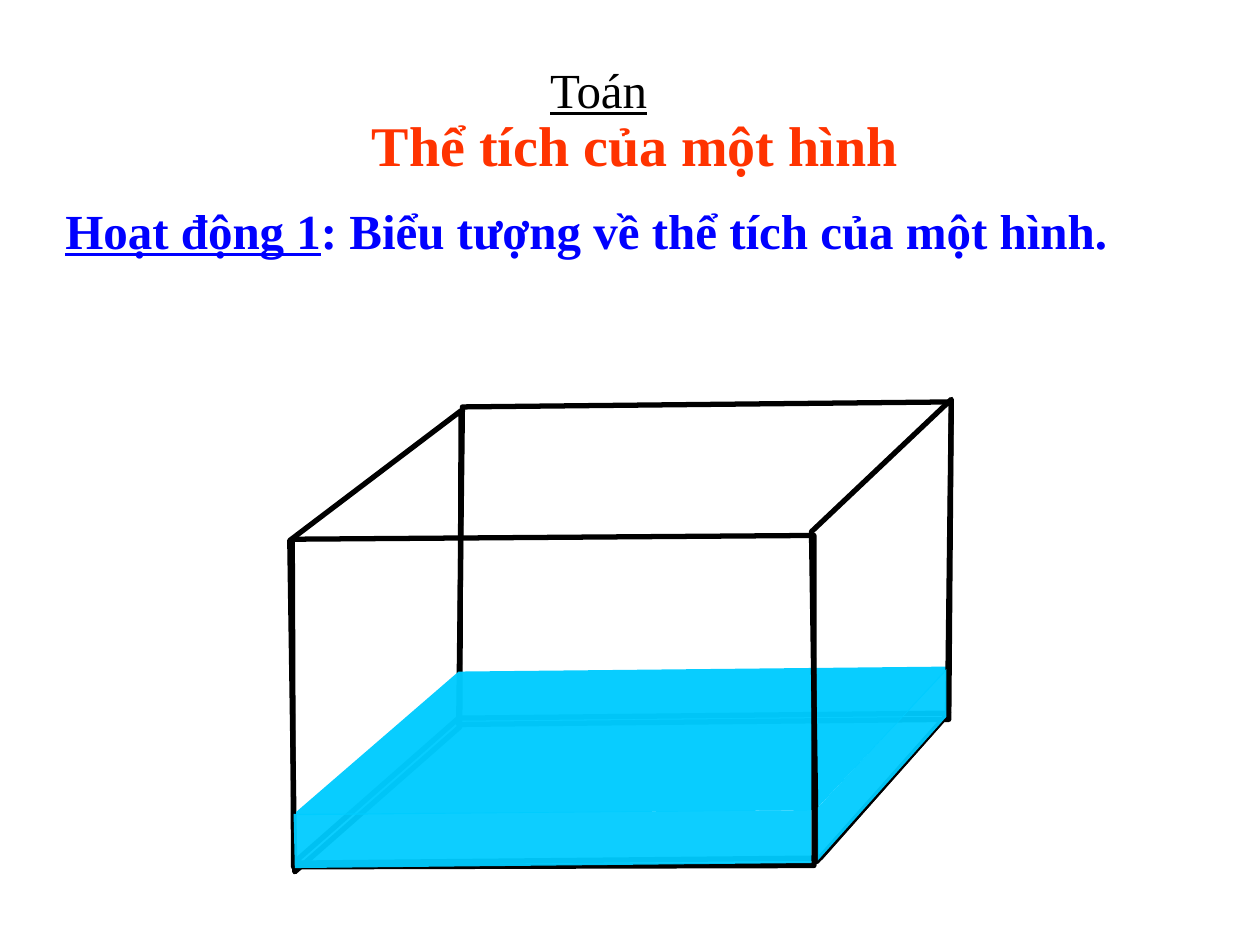
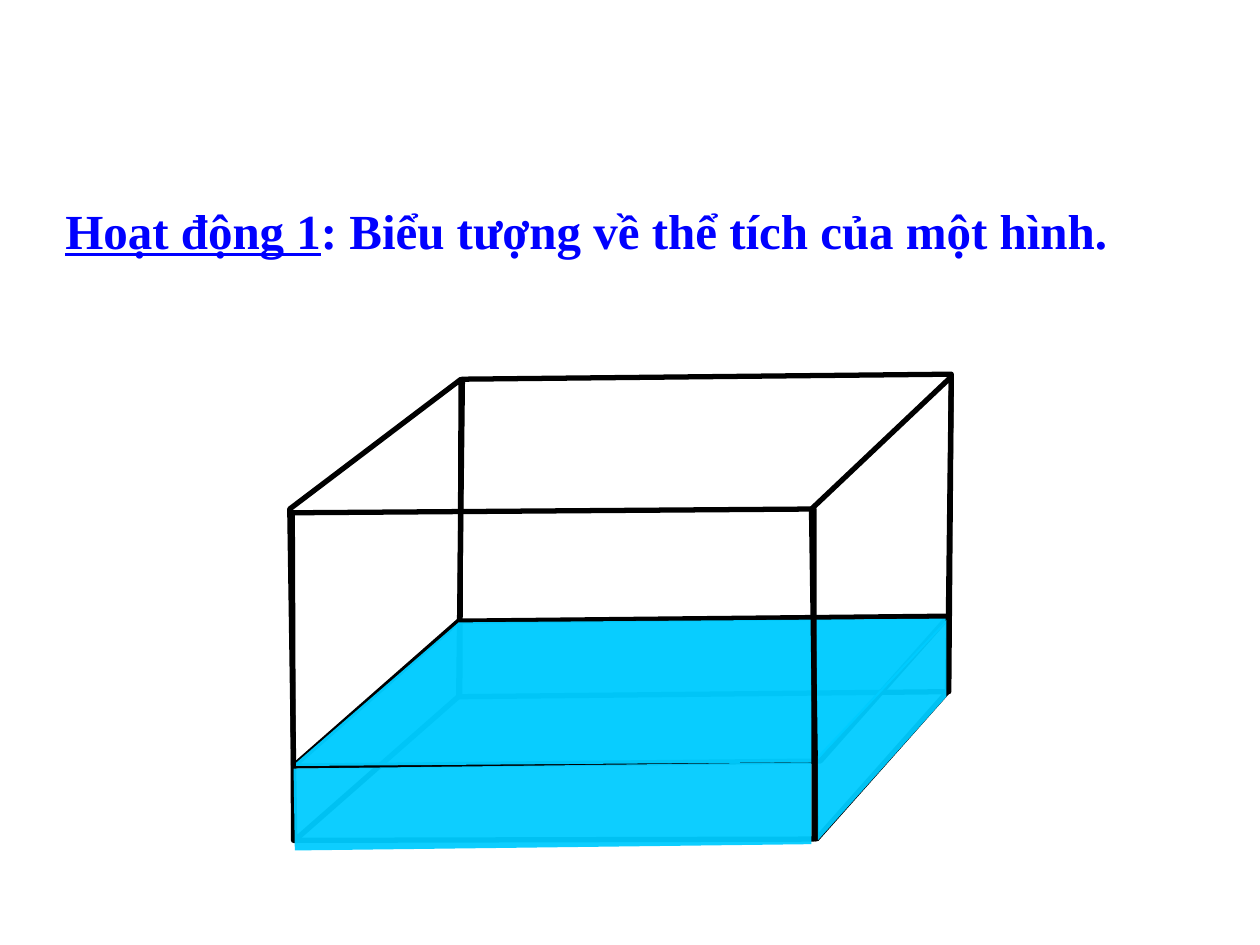
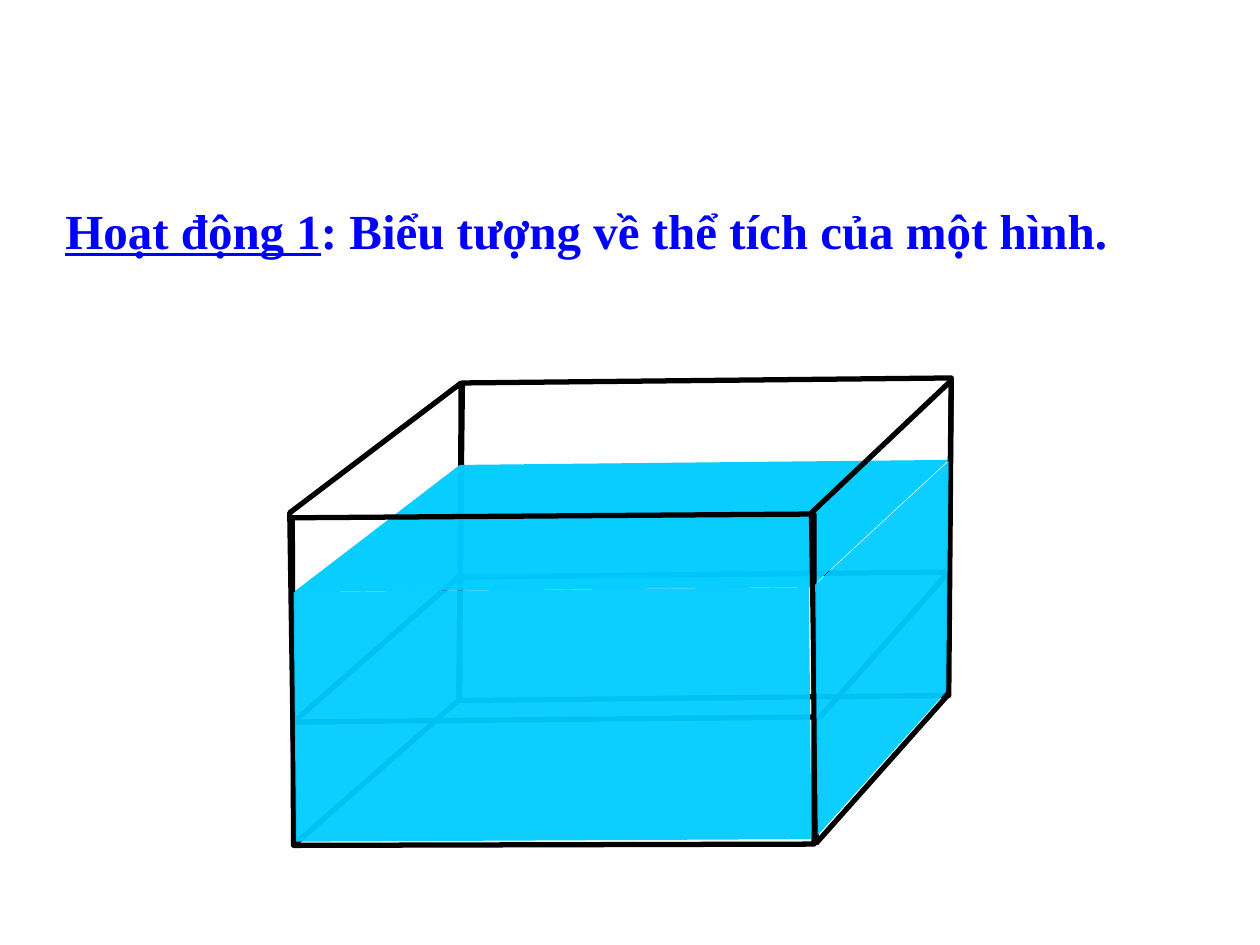
"""Build three slides that show a glass tank filling with water for a lesson on volume."""
from dataclasses import dataclass

from lxml import etree
from pptx import Presentation
from pptx import util as u
from pptx.dml.color import RGBColor
from pptx.enum import text
from pptx.oxml.ns import qn

PX = 9144


@dataclass(frozen=True)
class Theme:
    font: str = "Times New Roman"
    ink: str = "000000"
    lesson: str = "FF3300"
    activity: str = "0000FF"
    water: str = "00CCFF"
    lesson_size: int = 32
    body_size: int = 28
    edge: int = 3


theme = Theme()


def write(slide, box, runs, size=theme.body_size, color=theme.ink, bold=False,
          align=text.PP_ALIGN.LEFT):
    frame = slide.shapes.add_textbox(*(n * PX for n in box)).text_frame
    frame.word_wrap = True
    frame.auto_size = text.MSO_AUTO_SIZE.SHAPE_TO_FIT_TEXT
    line = frame.paragraphs[0]
    line.alignment = align
    for words, underlined in runs:
        run = line.add_run()
        run.text = words
        run.font.name = theme.font
        run.font.size = u.Pt(size)
        run.font.bold = bold
        run.font.underline = underlined
        run.font.color.rgb = RGBColor.from_string(color)


def draw_face(slide, points, opacity=None):
    outline = slide.shapes.build_freeform(*points[0], scale=PX)
    outline.add_line_segments(points[1:], close=True)
    face = outline.convert_to_shape()
    face.shadow.inherit = False
    if opacity is None:
        face.fill.background()
        face.line.color.rgb = RGBColor.from_string(theme.ink)
        face.line.width = u.Pt(theme.edge)
    else:
        face.fill.solid()
        face.fill.fore_color.rgb = RGBColor.from_string(theme.water)
        color = face.fill._xPr.find(qn("a:solidFill"))[0]
        etree.SubElement(color, qn("a:alpha"), val=str(opacity * 1000))
        face.line.fill.background()


glass = {
    "left": [(230, 103), (366, 0), (365, 251), (234, 366)],
    "back": [(364, 256), (753, 252), (755, 0), (367, 4)],
    "level": [(233, 119), (364, 4), (753, 0), (651, 115)],
    "front": [(233, 263), (646, 262), (646, 0), (232, 3)],
    "right": [(644, 105), (755, 0), (752, 250), (648, 367)],
}
water_opacity = {"surface": 97, "front water": 95, "right water": 95}
draw_order = ["left", "back", "level", "surface", "front", "right",
              "front water", "right water"]

tanks = [
    {
        "left": 326, "back": 319, "level": 566, "front": 425, "right": 317,
        "surface": [(232, 647), (364, 533), (754, 529), (647, 643)],
        "front water": [(233, 646), (644, 643), (644, 685), (234, 689)],
        "right water": [(751, 531), (649, 641), (649, 683), (751, 569)],
    },
    {
        "left": 301, "back": 297, "level": 489, "front": 404, "right": 299,
        "surface": [(232, 608), (364, 494), (754, 491), (647, 605)],
        "front water": [(233, 610), (644, 605), (644, 670), (234, 675)],
        "right water": [(751, 492), (649, 600), (649, 667), (751, 553)],
    },
    {
        "left": 304, "back": 300, "level": 454, "front": 408, "right": 302,
        "surface": [(233, 470), (365, 369), (753, 365), (644, 466)],
        "front water": [(233, 470), (642, 466), (644, 666), (235, 668)],
        "right water": [(753, 366), (647, 464), (649, 663), (751, 549)],
    },
]

deck = Presentation()
deck.slide_width, deck.slide_height = 1000 * PX, 750 * PX

for number, tank in enumerate(tanks):
    slide = deck.slides.add_slide(deck.slide_layouts[6])
    for part in draw_order:
        if part in glass:
            draw_face(slide, [(x, y + tank[part]) for x, y in glass[part]])
        else:
            draw_face(slide, tank[part], water_opacity[part])
    if number == 0:
        write(slide, (258, 83, 492, 64), [("Thể tích của một hình", False)],
              size=theme.lesson_size, color=theme.lesson, bold=True,
              align=text.PP_ALIGN.CENTER)
        write(slide, (417, 42, 133, 57), [(" ", False), ("Toán", True)])
    write(slide, (42, 154, 925, 104),
          [("Hoạt động 1", True), (": Biểu tượng về thể tích của một hình.", False)],
          color=theme.activity, bold=True)

deck.save("out.pptx")
